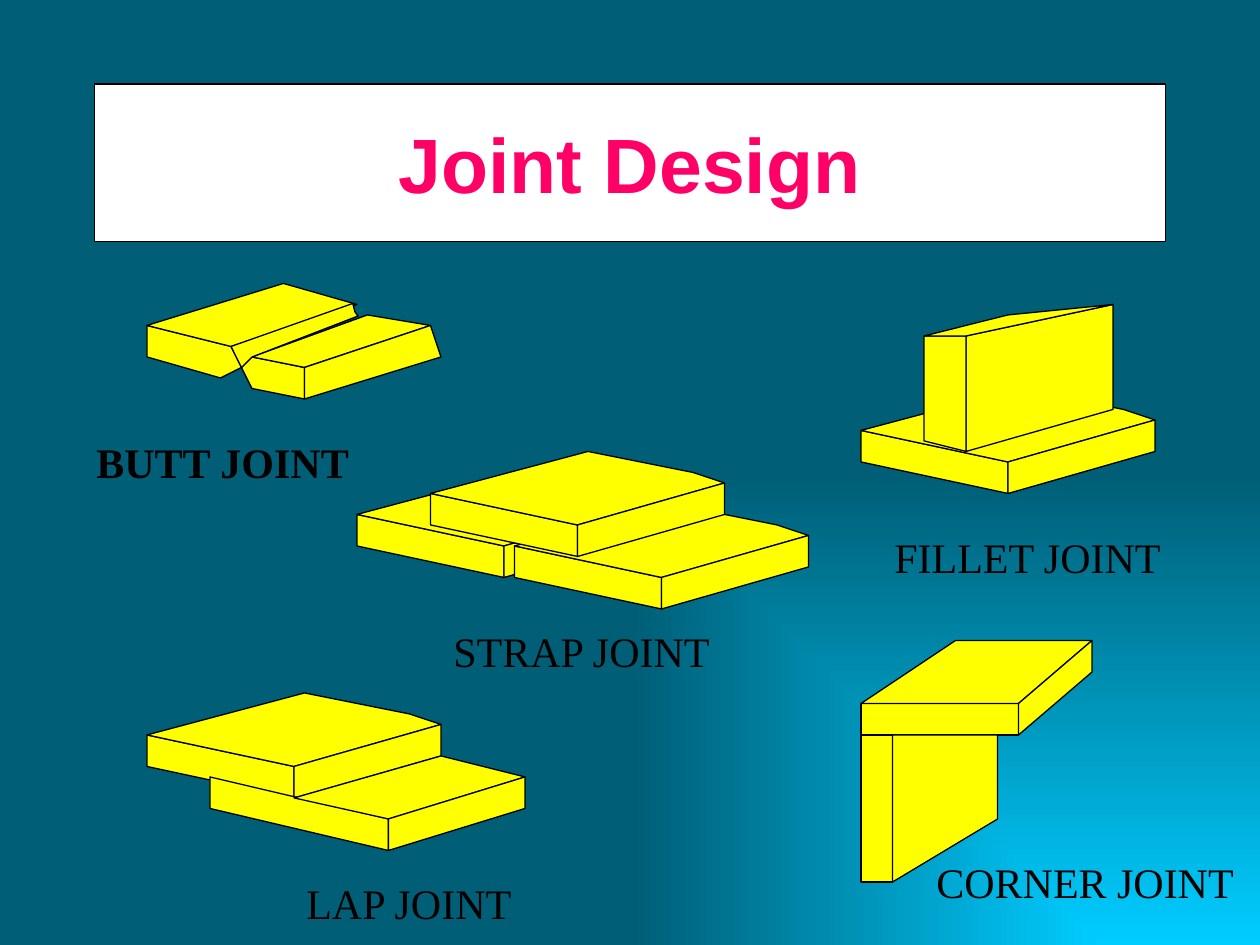
from dataclasses import dataclass

from lxml.etree import SubElement
from pptx import Presentation
from pptx.dml.color import RGBColor
from pptx.enum.shapes import MSO_SHAPE
from pptx.enum.text import MSO_ANCHOR, PP_ALIGN
from pptx.oxml.ns import qn
from pptx.util import Inches, Pt

# The slide is a grid of 120 columns by 90 rows, twelve to the inch
COLUMNS, ROWS, CELL = 120, 90, Inches(1) // 12
YELLOW, BLACK, WHITE, PINK = "FFFF00", "000000", "FFFFFF", "FF0066"
GLOW, DEEP = "00CCFF", "005E76"

Point = tuple[float, float]
Face = list[Point]


@dataclass
class Label:
    text: str
    column: int
    row: int
    columns: int
    bold: bool = False


@dataclass
class Joint:
    faces: list[Face]
    label: Label
    block: tuple[int, int, int, int] | None = None


def color(value: str) -> RGBColor:
    return RGBColor.from_string(value)


def cells(*lengths: float) -> list[int]:
    return [round(length * CELL) for length in lengths]


def slab(column: int, row: int) -> list[Face]:
    """Front, top and end faces of a plate whose top left corner is given."""
    faces = [
        [(0, 0), (14, 3), (14, 6), (0, 3)],
        [(0, 0), (15, -4), (25, -2), (28, -1), (14, 3)],
        [(14, 6), (28, 2), (28, -1), (14, 3)],
    ]
    return [[(column + x, row + y) for x, y in face] for face in faces]


def style_shape(shape, fill: str) -> None:
    shape.shadow.inherit = False
    shape.fill.solid()
    shape.fill.fore_color.rgb = color(fill)
    shape.line.color.rgb = color(BLACK)
    shape.line.width = Pt(0.75)


def style_font(font, value: str, formats: dict) -> None:
    font.color.rgb = color(value)
    for name, setting in formats.items():
        setattr(font, name, setting)


def draw_face(shapes, face: Face) -> None:
    start, *others = [cells(*point) for point in face]
    builder = shapes.build_freeform(*start)
    builder.add_line_segments(others, close=True)
    style_shape(builder.convert_to_shape(), YELLOW)


def draw_label(slide, label: Label) -> None:
    box = slide.shapes.add_textbox(*cells(label.column, label.row, label.columns, 6))
    box.text_frame.word_wrap = True
    run = box.text_frame.paragraphs[0].add_run()
    run.text = label.text
    style_font(run.font, BLACK,
               {"name": "Times New Roman", "size": Pt(24), "bold": label.bold})


def draw_joint(slide, joint: Joint) -> None:
    group = slide.shapes.add_group_shape()
    if joint.block:
        block = group.shapes.add_shape(MSO_SHAPE.RECTANGLE, *cells(*joint.block))
        style_shape(block, YELLOW)
    for face in joint.faces:
        draw_face(group.shapes, face)
    draw_label(slide, joint.label)


def draw_background(slide) -> None:
    """Gradient that spreads from the bottom right corner."""
    fill = slide.background.fill
    fill.gradient()
    for stop, value in zip(fill.gradient_stops, (GLOW, DEEP)):
        stop.color.rgb = color(value)
    for stop, position in zip(fill.gradient_stops, (0, 1)):
        stop.position = position
    gradient = slide.element.find(".//" + qn("a:gradFill"))
    linear = gradient.find(qn("a:lin"))
    spread = SubElement(gradient, qn("a:path"), {"path": "rect"})
    SubElement(spread, qn("a:fillToRect"), {"l": "100000", "t": "100000"})
    gradient.replace(linear, spread)


def draw_title(slide) -> None:
    title = slide.shapes.title
    bounds = dict(zip(("left", "top", "width", "height"), cells(9, 8, 102, 15)))
    for name, length in bounds.items():
        setattr(title, name, length)
    style_shape(title, WHITE)
    title.text_frame.text = "Joint Design"
    title.text_frame.vertical_anchor = MSO_ANCHOR.MIDDLE
    paragraph = title.text_frame.paragraphs[0]
    paragraph.alignment = PP_ALIGN.CENTER
    style_font(paragraph.runs[0].font, PINK,
               {"name": "Arial", "size": Pt(44), "bold": True})


BUTT = [
    [(14, 31), (22, 33), (23, 35), (21, 36), (14, 34)],
    [(14, 31), (27, 27), (34, 29), (22, 33)],
    [(35, 30), (24, 34), (23, 35), (24, 37), (29, 38), (29, 35), (24, 34)],
    [(35, 30), (24, 34), (29, 35), (38, 32), (41, 31)],
    [(29, 38), (42, 34), (41, 31), (29, 35)],
    [(33.6, 28.9), (33.8, 29.7), (34.1, 30.1), (24, 34), (23, 35), (22, 33)],
]
LAP_LOWER = [
    [(20, 74), (20, 77), (37, 81), (37, 78)],
    [(28, 76), (42, 72), (50, 74), (37, 78)],
    [(37, 81), (50, 77), (50, 74), (37, 78)],
]
FILLET_UPRIGHT = [
    [(92, 43), (106, 39), (106, 29), (92, 32)],
    [(92, 43), (88, 42), (88, 32), (92, 32)],
    [(88, 32), (96, 30), (106, 29), (92, 32)],
]
CORNER = [
    [(82, 84), (82, 70), (85, 70), (85, 84)],
    [(82, 67), (91, 61), (104, 61), (97, 67)],
    [(97, 70), (104, 64), (104, 61), (97, 67)],
    [(85, 84), (95, 78), (95, 70), (85, 70)],
]
JOINTS = [
    Joint(BUTT, Label("BUTT JOINT", 8, 41, 34, bold=True)),
    Joint(slab(14, 70) + LAP_LOWER, Label("LAP JOINT", 28, 83, 36)),
    Joint(slab(34, 49) + slab(49, 52) + slab(41, 47),
          Label("STRAP JOINT", 42, 59, 36)),
    Joint(slab(82, 41) + FILLET_UPRIGHT, Label("FILLET JOINT", 84, 50, 31)),
    Joint(CORNER, Label("CORNER JOINT", 88, 81, 35), block=(82, 67, 15, 3)),
]


def main() -> None:
    presentation = Presentation()
    presentation.slide_width, presentation.slide_height = cells(COLUMNS, ROWS)
    slide = presentation.slides.add_slide(presentation.slide_layouts[5])
    draw_background(slide)
    draw_title(slide)
    for joint in JOINTS:
        draw_joint(slide, joint)
    presentation.save("out.pptx")


if __name__ == "__main__":
    main()
